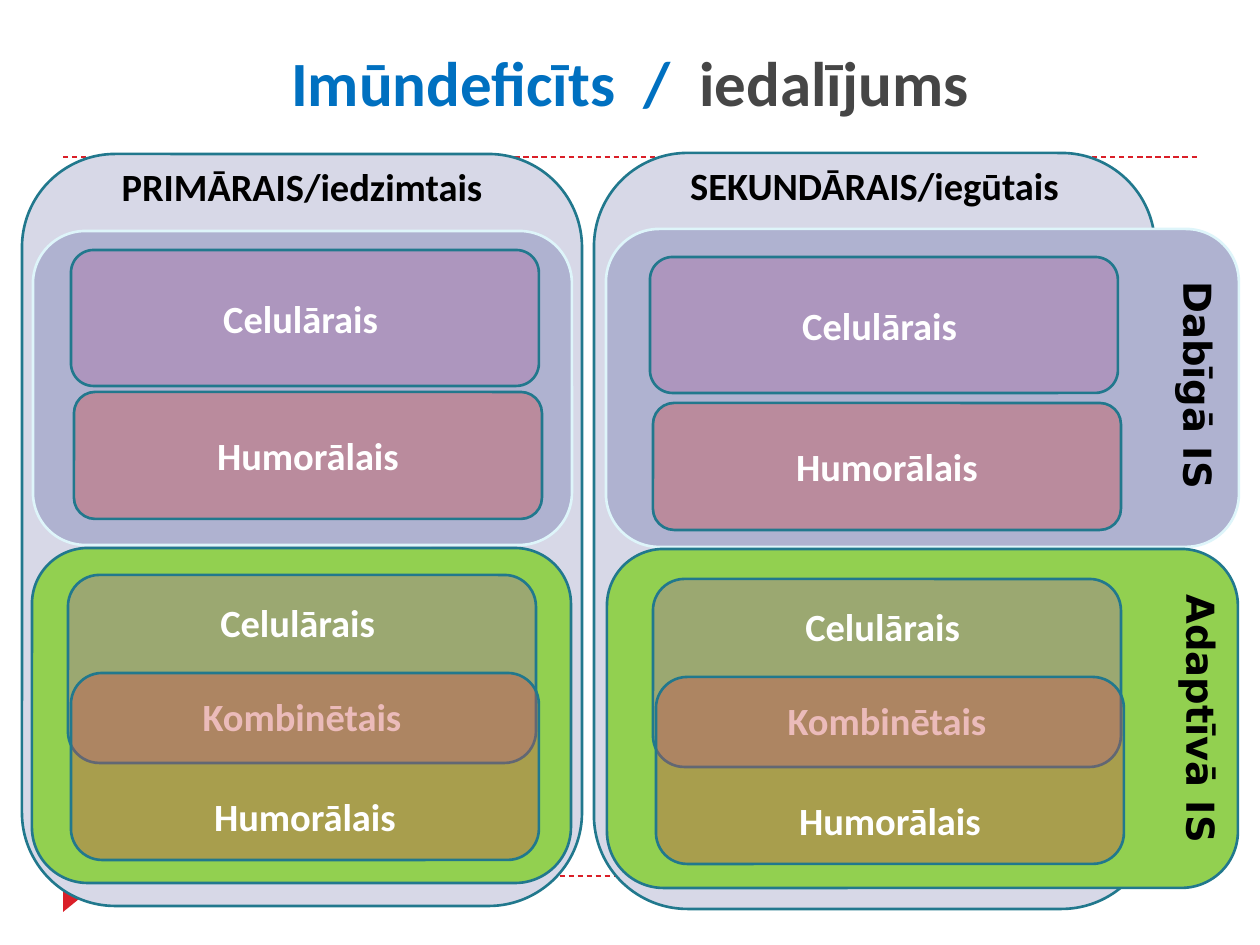
from pptx import Presentation
from pptx.util import Emu, Pt
from pptx.dml.color import RGBColor
from pptx.enum.dml import MSO_LINE
from pptx.enum.shapes import MSO_CONNECTOR, MSO_SHAPE
from pptx.enum.text import MSO_ANCHOR as ANCHOR, PP_ALIGN as ALIGN
from pptx.oxml.ns import qn
from lxml.etree import SubElement

PX = 914400 / 126
RED = RGBColor(0xDA, 0x1F, 0x28)
BLUE = RGBColor(0x00, 0x70, 0xC0)
GRAY = RGBColor(0x46, 0x46, 0x46)
BLACK = RGBColor(0x00, 0x00, 0x00)
WHITE = RGBColor(0xFF, 0xFF, 0xFF)
TEAL = RGBColor(0x21, 0x78, 0x8D)
ICE = RGBColor(0xDE, 0xF5, 0xFA)
PALE = RGBColor(0xD7, 0xD8, 0xE7)
LAVENDER = RGBColor(0xAF, 0xB2, 0xD0)
GREEN = RGBColor(0x92, 0xD0, 0x50)
PURPLE = RGBColor(0xAA, 0x6C, 0xA3)
CORAL = RGBColor(0xCC, 0x4D, 0x4A)

prs = Presentation()
prs.slide_width, prs.slide_height = Emu(9144000), Emu(6858000)
s = prs.slides.add_slide(prs.slide_layouts[6])


def add_text(sp, paragraphs, size=22, font="Calibri", align=ALIGN.CENTER,
             anchor=ANCHOR.MIDDLE, gap=0, wrap=True):
    """Each paragraph is a list of (text, colour) runs."""
    tf = sp.text_frame
    tf.word_wrap, tf.vertical_anchor = wrap, anchor
    for i, runs in enumerate(paragraphs):
        p = tf.paragraphs[0] if i == 0 else tf.add_paragraph()
        p.alignment = align
        if i:
            p.space_before = Pt(gap)
        for text, color in runs:
            r = p.add_run()
            r.text = text
            r.font.size, r.font.name, r.font.bold = Pt(size), font, True
            r.font.color.rgb = color
    return tf


def add_panel(box, fill, line=TEAL, alpha=None):
    sp = s.shapes.add_shape(MSO_SHAPE.ROUNDED_RECTANGLE, *[Emu(round(v * PX)) for v in box])
    sp.shadow.inherit = False
    sp.fill.solid()
    sp.fill.fore_color.rgb = fill
    sp.line.color.rgb, sp.line.width = line, Pt(1.5)
    if alpha:
        clr = sp.element.spPr.find(qn("a:solidFill"))[0]
        SubElement(clr, qn("a:alpha")).set("val", str(alpha * 1000))
    return sp


# Dashed rules and corner marker
for y in (876, 157):
    x1, x2, y = [Emu(round(v * PX)) for v in (63, 1197, y)]
    rule = s.shapes.add_connector(MSO_CONNECTOR.STRAIGHT, x1, y, x2, y)
    rule.line.color.rgb, rule.line.width = RED, Pt(0.75)
    rule.line.dash_style = MSO_LINE.DASH
    SubElement(rule.element.spPr, qn("a:effectLst"))
marker = s.shapes.add_shape(MSO_SHAPE.ISOSCELES_TRIANGLE,
                            *[Emu(round(v * PX)) for v in (58, 891, 26, 16)])
marker.rotation = 90
marker.shadow.inherit = False
marker.fill.solid()
marker.fill.fore_color.rgb = RED
marker.line.fill.background()

# Title
title = s.shapes.add_textbox(*[Emu(round(v * PX)) for v in (63, 32, 1134, 93)])
add_text(title, [[("Imūndeficīts  / ", BLUE), (" iedalījums", GRAY)]],
         size=36, anchor=ANCHOR.BOTTOM)

# Columns: heading, column box, innate box, adaptive box
columns = [
    ("PRIMĀRAIS/iedzimtais", (22, 154, 560, 752), (33, 231, 539, 314), (32, 548, 539, 335)),
    ("SEKUNDĀRAIS/iegūtais", (594, 153, 561, 756), (606, 229, 633, 318), (607, 549, 631, 339)),
]
for heading, column, innate, adaptive in columns:
    add_panel(column, PALE)
    x, y, w, h = column
    header = s.shapes.add_textbox(*[Emu(round(v * PX)) for v in (x, y + 2, w, 60)])
    add_text(header, [[(heading, BLACK)]])
    add_panel(innate, LAVENDER, ICE)
    add_panel(adaptive, GREEN)

# Vertical labels of the two immune systems
for label, box in (("Dabīgā IS", (1079, 359, 239, 59)), ("Adaptīvā IS", (1061, 693, 281, 59))):
    tb = s.shapes.add_textbox(*[Emu(round(v * PX)) for v in box])
    tb.rotation = 90
    add_text(tb, [[(label, BLACK)]], font="DejaVu Sans", align=ALIGN.LEFT,
             anchor=ANCHOR.TOP, wrap=False)

# Cell types: (x, top of innate pair, top of adaptive pair, humoral drop in innate)
CELLULAR, HUMORAL = [("Celulārais ", WHITE)], [("Humorālais", WHITE)]
COMBINED = [("Kombinētais", WHITE)]
W = 468
for x, innate_y, adaptive_x, adaptive_y, drop in ((71, 250, 68, 575, 142),
                                                  (650, 257, 653, 579, 146)):
    add_text(add_panel((x, innate_y, W, 136), PURPLE, alpha=40), [CELLULAR])
    add_text(add_panel((x + 3, innate_y + drop, W, 127), CORAL, alpha=38), [HUMORAL])
    add_text(add_panel((adaptive_x, adaptive_y, W, 188), PURPLE, alpha=40),
             [CELLULAR, COMBINED], gap=27)
    tf = add_text(add_panel((adaptive_x + 3, adaptive_y + 98, W, 187), CORAL, alpha=38),
                  [HUMORAL], anchor=ANCHOR.BOTTOM)
    tf.margin_bottom = Emu(round(12 * PX))

prs.save("out.pptx")
